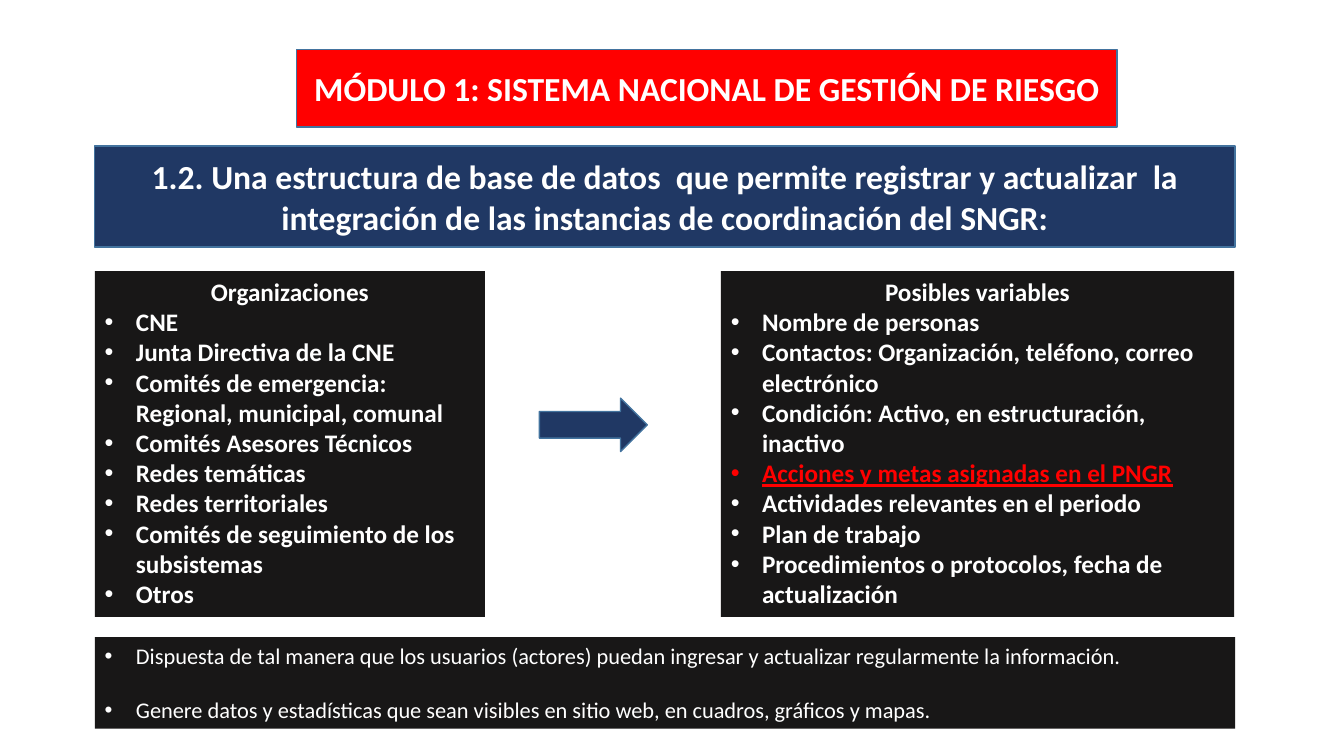
from lxml.etree import SubElement
from pptx import Presentation
from pptx.dml.color import RGBColor
from pptx.enum.shapes import MSO_SHAPE
from pptx.enum.text import MSO_ANCHOR, MSO_AUTO_SIZE, PP_ALIGN
from pptx.oxml.ns import qn
from pptx.util import Emu, Pt

PX = 9144  # EMU per px, 100 px to the inch
FONT = "Calibri"
WHITE, RED, NAVY, BLACK, EDGE = "FFFFFF", "FF0000", "203864", "181717", "43739E"
LEFT, FULL_WIDTH = 94, 1131
LISTS_TOP, LISTS_HEIGHT = 269, 343
INDENT = 31

ORGANIZATIONS = [
    "CNE",
    "Junta Directiva de la CNE",
    "Comités de emergencia: Regional, municipal, comunal",
    "Comités Asesores Técnicos",
    "Redes temáticas",
    "Redes territoriales",
    "Comités de seguimiento de los subsistemas",
    "Otros",
]
KEY_VARIABLE = "Acciones y metas asignadas en el PNGR"
VARIABLES = [
    "Nombre de personas",
    "Contactos: Organización, teléfono, correo electrónico",
    "Condición: Activo, en estructuración, inactivo",
    KEY_VARIABLE,
    "Actividades relevantes en el periodo",
    "Plan de trabajo",
    "Procedimientos o protocolos, fecha de actualización",
]
REQUIREMENTS = [
    "Dispuesta de tal manera que los usuarios (actores) puedan ingresar "
    "y actualizar regularmente la información.",
    "Genere datos y estadísticas que sean visibles en sitio web, "
    "en cuadros, gráficos y mapas.",
]


def px(n):
    return Emu(n * PX)


def color(value):
    return RGBColor.from_string(value)


def add_block(s, x, y, w, h, fill, line=None, kind=MSO_SHAPE.RECTANGLE):
    sp = s.shapes.add_shape(kind, px(x), px(y), px(w), px(h))
    sp.shadow.inherit = False
    sp.fill.solid()
    sp.fill.fore_color.rgb = color(fill)
    if line:
        sp.line.color.rgb = color(line)
        sp.line.width = Pt(1)
    else:
        sp.line.fill.background()
    sp.text_frame.word_wrap = True
    return sp


def add_bullet(p):
    pPr = p._p.get_or_add_pPr()
    pPr.set("marL", str(px(INDENT)))
    pPr.set("indent", str(-px(INDENT)))
    SubElement(pPr, qn("a:buFont")).set("typeface", "Arial")
    SubElement(pPr, qn("a:buChar")).set("char", "•")


def add_text(tf, text, size=18, bold=True, fill=WHITE, underline=None,
             align=PP_ALIGN.LEFT, bullet=False, before=0):
    """Write one paragraph, using the first one while it is still empty."""
    p = tf.paragraphs[0]
    if p.runs:
        p = tf.add_paragraph()
    p.alignment = align
    p.space_before = Pt(before)
    if bullet:
        add_bullet(p)
    r = p.add_run()
    r.text = text
    r.font.name = FONT
    r.font.size = Pt(size)
    r.font.bold = bold
    r.font.underline = underline
    r.font.color.rgb = color(fill)


def add_banner(s, x, y, w, h, fill, text):
    tf = add_block(s, x, y, w, h, fill, EDGE).text_frame
    tf.vertical_anchor = MSO_ANCHOR.MIDDLE
    add_text(tf, text, size=24, align=PP_ALIGN.CENTER)


def add_panel(s, x, y, w, h):
    tf = add_block(s, x, y, w, h, BLACK).text_frame
    tf.vertical_anchor = MSO_ANCHOR.TOP
    tf.auto_size = MSO_AUTO_SIZE.SHAPE_TO_FIT_TEXT
    return tf


def add_list(s, x, w, heading, items):
    tf = add_panel(s, x, LISTS_TOP, w, LISTS_HEIGHT)
    add_text(tf, heading, align=PP_ALIGN.CENTER)
    for item in items:
        key = item == KEY_VARIABLE
        add_text(tf, item, bullet=True, fill=RED if key else WHITE,
                 underline=key)


def add_requirements(s):
    tf = add_panel(s, LEFT, 632, FULL_WIDTH, 91)
    for i, item in enumerate(REQUIREMENTS):
        add_text(tf, item, size=16, bold=False, bullet=True,
                 before=19.5 if i else 0)


def main():
    prs = Presentation()
    prs.slide_width, prs.slide_height = px(1333), px(750)
    s = prs.slides.add_slide(prs.slide_layouts[6])
    add_banner(s, 294, 49, 814, 77, RED,
               "MÓDULO 1: SISTEMA NACIONAL DE GESTIÓN DE RIESGO")
    add_banner(s, LEFT, 145, FULL_WIDTH, 100, NAVY,
               "1.2. Una estructura de base de datos  que permite registrar y "
               "actualizar  la integración de las instancias de coordinación "
               "del SNGR:")
    add_list(s, LEFT, 387, "Organizaciones", ORGANIZATIONS)
    add_list(s, 715, 509, "Posibles variables", VARIABLES)
    add_block(s, 535, 395, 107, 53, NAVY, EDGE, MSO_SHAPE.RIGHT_ARROW)
    add_requirements(s)
    prs.save("out.pptx")


if __name__ == "__main__":
    main()
